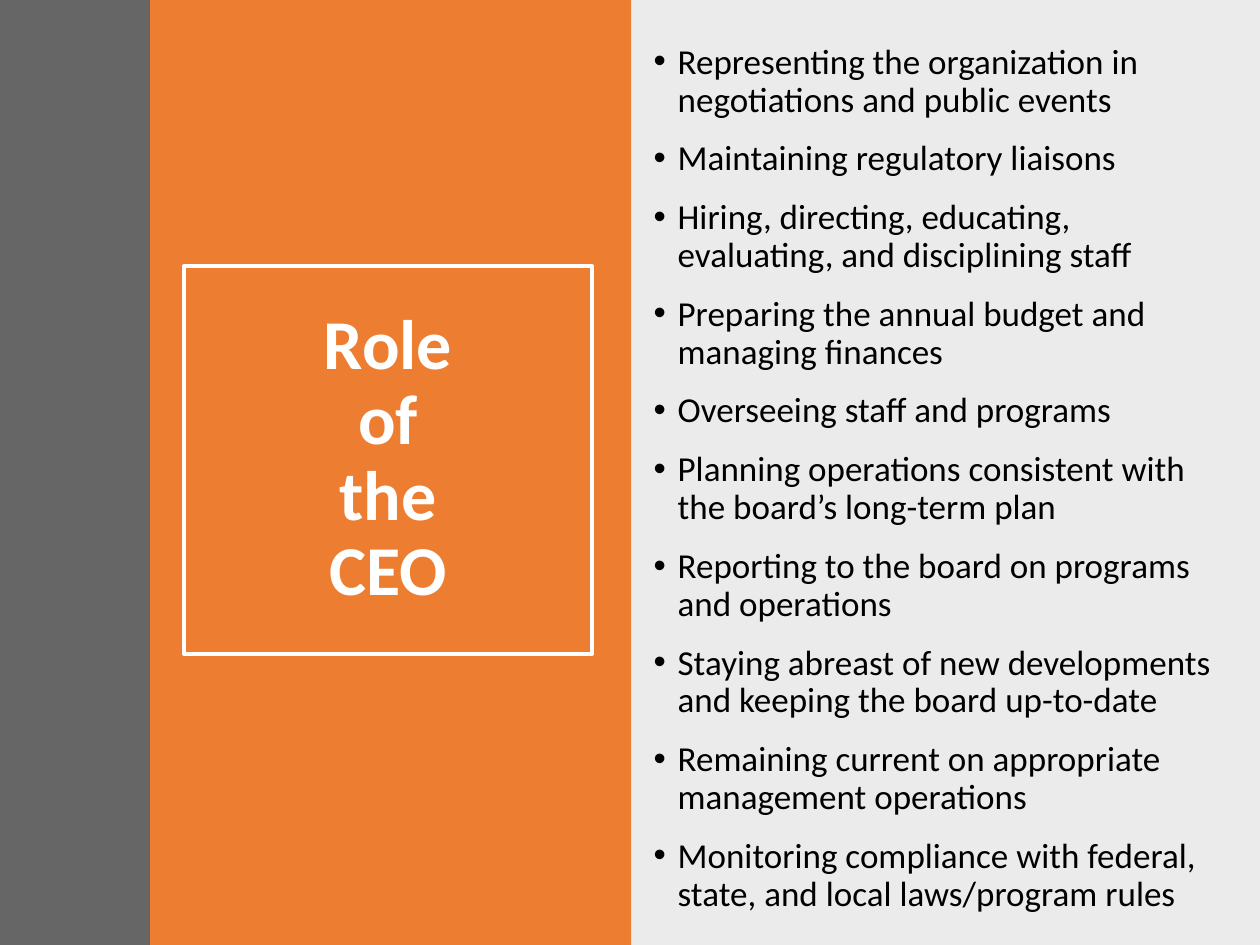
from dataclasses import dataclass

from lxml.etree import SubElement
from pptx import Presentation
from pptx.dml.color import RGBColor
from pptx.enum.shapes import MSO_SHAPE
from pptx.enum.text import MSO_ANCHOR, PP_ALIGN
from pptx.oxml.ns import qn
from pptx.util import Inches, Pt


@dataclass(frozen=True)
class Theme:
    font: str = "Calibri"
    dark: RGBColor = RGBColor(0x40, 0x40, 0x40)
    accent: RGBColor = RGBColor(0xED, 0x7D, 0x31)
    white: RGBColor = RGBColor(0xFF, 0xFF, 0xFF)
    black: RGBColor = RGBColor(0, 0, 0)
    title_size: Pt = Pt(40)
    body_size: Pt = Pt(20)


THEME = Theme()
TITLE = "Role\vof\vthe\vCEO"
DUTIES = [
    "Representing the organization in negotiations and public events",
    "Maintaining regulatory liaisons",
    "Hiring, directing, educating, evaluating, and disciplining staff",
    "Preparing the annual budget and managing finances",
    "Overseeing staff and programs",
    "Planning operations consistent with the board’s long-term plan",
    "Reporting to the board on programs \vand operations",
    "Staying abreast of new developments and keeping the board up-to-date",
    "Remaining current on appropriate \vmanagement operations",
    "Monitoring compliance with federal, state, and local laws/program rules",
]


def apply_format(target, values):
    for name, value in values.items():
        setattr(target, name, value)


def write_text(para, text, color, size, bold=False):
    para.text = text
    for span in para.runs:
        apply_format(span.font, {"name": THEME.font, "size": size, "bold": bold})
        span.font.color.rgb = color


def add_panel(page, box, color, opacity=100):
    panel = page.shapes.add_shape(MSO_SHAPE.RECTANGLE, *map(Inches, box))
    panel.shadow.inherit = False
    panel.line.fill.background()
    panel.fill.solid()
    panel.fill.fore_color.rgb = color
    if opacity < 100:
        tint = panel.fill._xPr.find(".//" + qn("a:srgbClr"))
        SubElement(tint, qn("a:alpha"), val=str(opacity * 1000))


def add_title(page, box):
    frame = page.shapes.add_shape(MSO_SHAPE.RECTANGLE, *map(Inches, box))
    frame.shadow.inherit = False
    frame.fill.background()
    frame.line.color.rgb = THEME.white
    frame.line.width = Pt(2)
    apply_format(frame.text_frame, {"word_wrap": True, "vertical_anchor": MSO_ANCHOR.MIDDLE})
    para = frame.text_frame.paragraphs[0]
    apply_format(para, {"alignment": PP_ALIGN.CENTER, "line_spacing": 0.9})
    write_text(para, TITLE, THEME.white, THEME.title_size, bold=True)


def add_bullet(para):
    properties = para._p.get_or_add_pPr()
    properties.set("marL", str(Inches(0.19)))
    properties.set("indent", str(Inches(-0.19)))
    SubElement(properties, qn("a:buFont"), typeface="Arial")
    SubElement(properties, qn("a:buChar"), char="•")


def add_duties(page, box):
    frame = page.shapes.add_textbox(*map(Inches, box)).text_frame
    frame.word_wrap = True
    for index, duty in enumerate(DUTIES):
        para = frame.add_paragraph() if index else frame.paragraphs[0]
        add_bullet(para)
        apply_format(para, {
            "line_spacing": 0.9,
            "space_before": Pt(6 if index else 0),
            "space_after": Pt(6),
        })
        write_text(para, duty, THEME.black, THEME.body_size)


def main():
    deck = Presentation()
    apply_format(deck, {"slide_width": Inches(10), "slide_height": Inches(7.5)})
    page = deck.slides.add_slide(deck.slide_layouts[6])
    add_panel(page, (5, 0, 5, 7.5), THEME.black, opacity=8)
    add_panel(page, (1.19, 0, 3.82, 7.5), THEME.accent)
    add_title(page, (1.46, 2.11, 3.24, 3.08))
    add_panel(page, (0, 0, 1.19, 7.5), THEME.dark, opacity=80)
    add_duties(page, (5.09, 0.3, 4.8, 3.48))
    deck.save("out.pptx")


if __name__ == "__main__":
    main()
